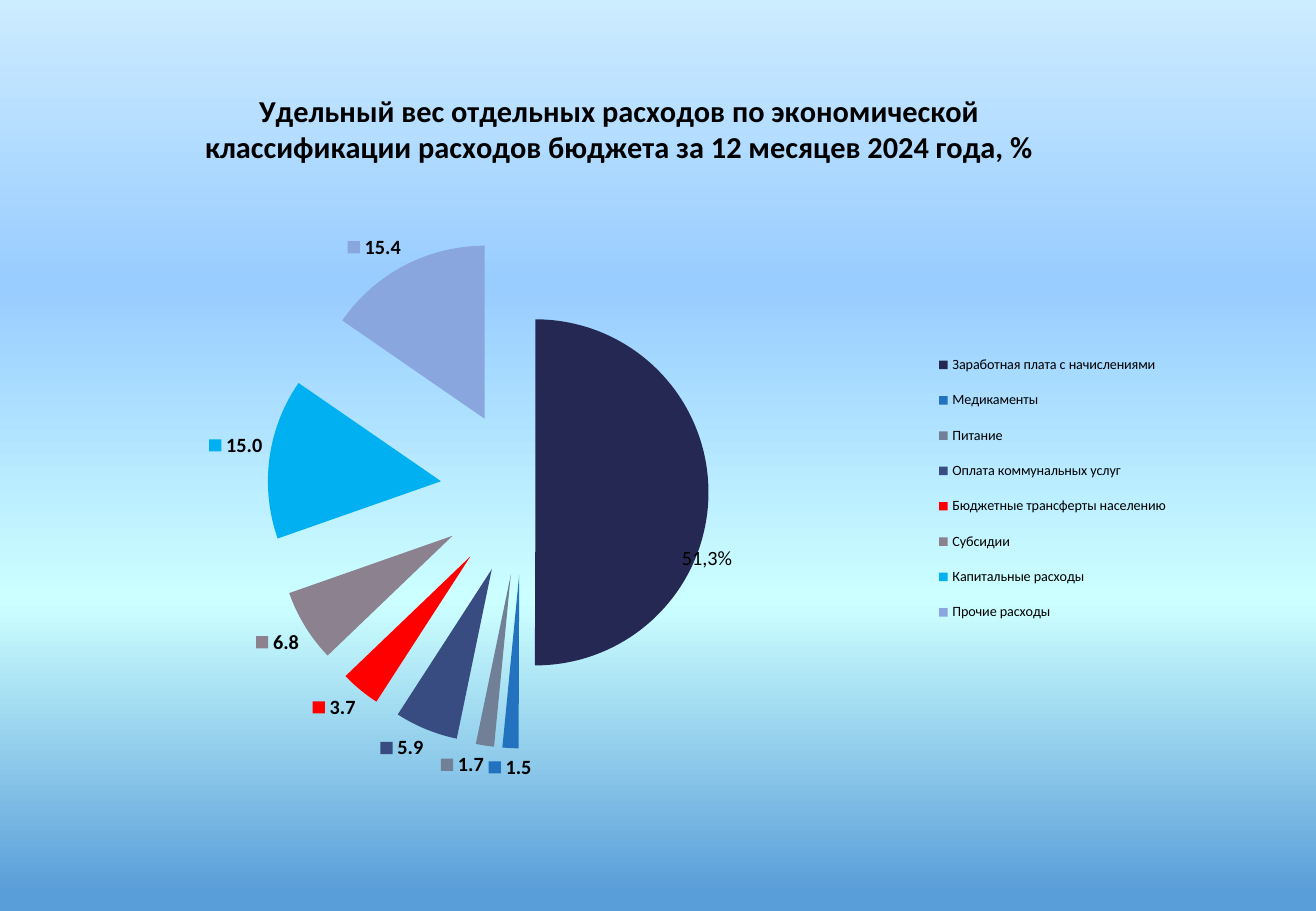
from copy import deepcopy

from lxml.etree import SubElement
from pptx import Presentation
from pptx.chart.data import CategoryChartData
from pptx.dml.color import RGBColor
from pptx.enum.chart import XL_CHART_TYPE, XL_LABEL_POSITION as LabelPos, XL_LEGEND_POSITION as LegendPos
from pptx.oxml.ns import qn
from pptx.util import Pt

BLACK = RGBColor(0, 0, 0)
NAVY = RGBColor(0x24, 0x28, 0x52)
BLUE = RGBColor(0x23, 0x72, 0xBF)
SLATE = RGBColor(0x71, 0x80, 0x97)
INDIGO = RGBColor(0x38, 0x4C, 0x81)
RED = RGBColor(0xFF, 0, 0)
MAUVE = RGBColor(0x8B, 0x81, 0x8F)
SKY = RGBColor(0, 0xB0, 0xF0)
LAVENDER = RGBColor(0x8A, 0xA6, 0xDE)

BACKDROP = [
    (0, RGBColor(0xCC, 0xEC, 0xFF)),
    (0.31, RGBColor(0x99, 0xCC, 0xFF)),
    (0.66, RGBColor(0xCC, 0xFF, 0xFF)),
    (0.98, RGBColor(0x5A, 0x9E, 0xD9)),
]

HEADING = ("Удельный вес отдельных расходов по экономической "
           "классификации расходов бюджета за 12 месяцев 2024 года, %")

# Category, share in %, colour
EXPENSES = [
    ("Заработная плата с начислениями", 50.1, NAVY),
    ("Медикаменты", 1.5, BLUE),
    ("Питание", 1.7, SLATE),
    ("Оплата коммунальных услуг", 5.9, INDIGO),
    ("Бюджетные трансферты населению", 3.7, RED),
    ("Субсидии", 6.8, MAUVE),
    ("Капитальные расходы", 15.0, SKY),
    ("Прочие расходы", 15.4, LAVENDER),
]


def place(parent, index, **layout):
    """Give a chart part a manual layout, in fractions of the chart."""
    for old in parent.findall(qn("c:layout")):
        parent.remove(old)
    holder = parent.makeelement(qn("c:layout"))
    parent.insert(index, holder)
    manual = SubElement(holder, qn("c:manualLayout"))
    for key, value in layout.items():
        SubElement(manual, qn("c:" + key)).set("val", str(value))


def explode(follower, percent):
    """Set an explosion in front of the given chart element."""
    follower.addprevious(
        follower.makeelement(qn("c:explosion"), {"val": str(percent)}))


class BudgetSlide:
    def __init__(self, slide, font="Calibri", color=BLACK):
        self.slide, self.font_name, self.color = slide, font, color

    def style(self, font, size, bold=False):
        values = {"name": self.font_name, "size": Pt(size), "bold": bold}
        for key, value in values.items():
            setattr(font, key, value)
        font.color.rgb = self.color

    def background(self, colors):
        fill = self.slide.background.fill
        fill.gradient()
        fill.gradient_angle = 270
        stops = self.slide.background._cSld.find(".//" + qn("a:gsLst"))
        while len(stops) < len(colors):
            stops.append(deepcopy(stops[0]))
        for stop, (position, color) in zip(fill.gradient_stops, colors):
            stop.position = position
            stop.color.rgb = color

    def pie(self, left, top, width, height, expenses):
        data = CategoryChartData(number_format="#,##0.0")
        data.categories = [name for name, *_ in expenses]
        data.add_series("Series 1", [share for _, share, _ in expenses])
        chart = self.slide.shapes.add_chart(
            XL_CHART_TYPE.PIE, Pt(left), Pt(top), Pt(width), Pt(height), data).chart
        self.style(chart.font, 10)
        plot = chart.plots[0]
        plot.vary_by_categories = True
        place(plot._element.getparent(), 0, layoutTarget="inner", xMode="edge",
              yMode="edge", x=0.072, y=0.222, w=0.618, h=0.696)
        series = plot.series[0]
        for i, (_, _, color) in enumerate(expenses):
            fill = series.points[i].format.fill
            fill.solid()
            fill.fore_color.rgb = color
        # All slices stand far out, the first one only a little
        first = series._element.find(qn("c:dPt"))
        explode(first, 48)
        explode(first.find(qn("c:spPr")), 7)
        return chart

    def heading(self, chart, text):
        chart.has_title = True
        title = chart.chart_title
        title.text_frame.text = text
        self.style(title.text_frame.paragraphs[0].runs[0].font, 18, True)
        title.include_in_layout = False
        place(title._element, 1, xMode="edge", yMode="edge", x=0.094, y=0.015)

    def labels(self, series):
        labels = series.data_labels
        values = {
            "show_value": True,
            "show_percentage": False,
            "show_legend_key": True,
            "number_format": "#,##0.0",
            "number_format_is_linked": False,
            "position": LabelPos.OUTSIDE_END,
        }
        for key, value in values.items():
            setattr(labels, key, value)
        self.style(labels.font, 12, True)
        leaders = labels._element.find(qn("c:showLeaderLines"))
        if leaders is None:
            leaders = SubElement(labels._element, qn("c:showLeaderLines"))
        leaders.set("val", "0")

    def custom_label(self, series, index, text, dx, dy):
        label = series.points[index].data_label
        label.text_frame.text = text
        self.style(label.text_frame.paragraphs[0].runs[0].font, 12)
        label.position = LabelPos.OUTSIDE_END
        entry = series.data_labels._element.find(qn("c:dLbl"))
        place(entry, 1, x=dx, y=dy)

    def legend(self, chart):
        chart.has_legend = True
        legend = chart.legend
        legend.position = LegendPos.RIGHT
        legend.include_in_layout = False
        self.style(legend.font, 8.4)
        place(legend._element, 1, xMode="edge", yMode="edge",
              x=0.74, y=0.36, w=0.22, h=0.41)


def main():
    deck = Presentation()
    deck.slide_width, deck.slide_height = Pt(780), Pt(540)
    budget = BudgetSlide(deck.slides.add_slide(deck.slide_layouts[6]))

    # Backdrop
    budget.background(BACKDROP)

    # Exploded pie of expenses
    chart = budget.pie(55.4, 43.2, 668.9, 436.3, EXPENSES)
    budget.heading(chart, HEADING)
    shares = chart.plots[0].series[0]
    budget.labels(shares)
    budget.custom_label(shares, 0, "51,3%", -0.03, 0.09)
    budget.legend(chart)

    deck.save("out.pptx")


if __name__ == "__main__":
    main()
